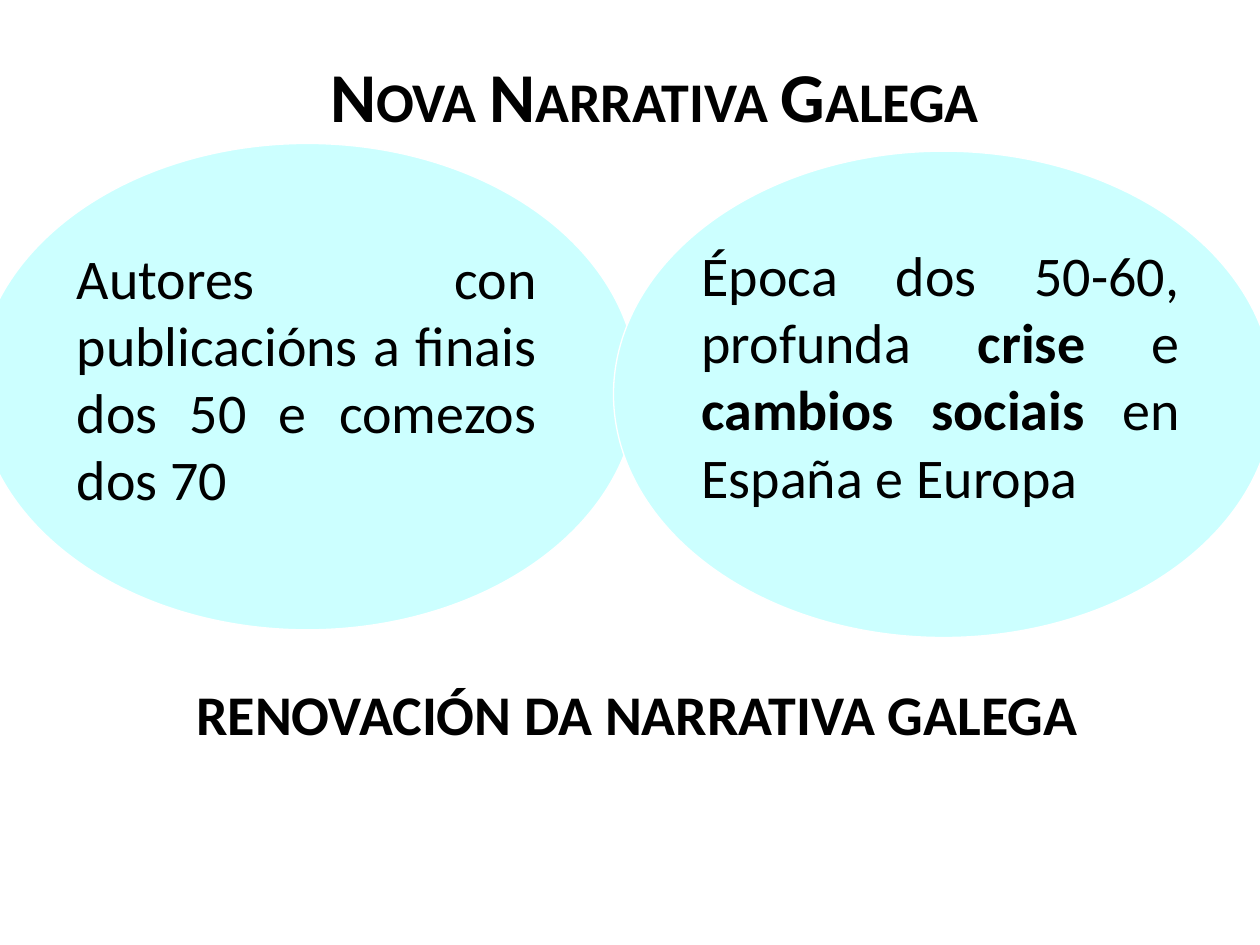
from pptx import Presentation
from pptx.dml.color import RGBColor
from pptx.enum.shapes import MSO_SHAPE
from pptx.enum.text import MSO_ANCHOR, MSO_AUTO_SIZE, PP_ALIGN
from pptx.util import Pt


def color(value):
    return RGBColor.from_string(value)


def write_text(shape, *parts, size=32, align=PP_ALIGN.LEFT, small_caps=False):
    """Fill the shape with one paragraph made of (text, bold) parts."""
    frame = shape.text_frame
    frame.word_wrap = True
    frame.auto_size = MSO_AUTO_SIZE.SHAPE_TO_FIT_TEXT
    frame.vertical_anchor = MSO_ANCHOR.TOP
    paragraph = frame.paragraphs[0]
    paragraph.alignment = align
    for text, bold in parts:
        run = paragraph.add_run()
        run.text = text
        run.font.name = "Calibri"
        run.font.size = Pt(size)
        run.font.bold = bold
        run.font.color.rgb = color("000000")
        if small_caps:
            run._r.get_or_add_rPr().set("cap", "small")


presentation = Presentation()
presentation.slide_width = Pt(720)
presentation.slide_height = Pt(540)
slide = presentation.slides.add_slide(presentation.slide_layouts[5])

# Title
title = slide.shapes.title
title.left, title.top, title.width, title.height = Pt(181.4), Pt(26.6), Pt(395.3), Pt(55.4)
write_text(title, ("Nova Narrativa Galega", True), size=40, small_caps=True)

# Ellipses
for left, top in [(-13, 82), (350.6, 86.4)]:
    ellipse = slide.shapes.add_shape(MSO_SHAPE.OVAL, Pt(left), Pt(top), Pt(377.3), Pt(277.9))
    ellipse.shadow.inherit = False
    ellipse.fill.solid()
    ellipse.fill.fore_color.rgb = color("CCFFFF")
    ellipse.line.color.rgb = color("FFFFFF")
    ellipse.line.width = Pt(0.75)

# Texts over the ellipses and the conclusion below them
authors = [("Autores con publicacións a finais dos 50 e comezos dos 70", False)]
period = [
    ("Época dos 50-60, profunda ", False),
    ("crise", True),
    (" e ", False),
    ("cambios sociais ", True),
    ("en España e Europa", False),
]
conclusion = [("RENOVACIÓN DA NARRATIVA GALEGA", True)]
for left, top, width, height, align, parts in [
    (36.7, 135.4, 277.2, 162.7, PP_ALIGN.JUSTIFY, authors),
    (393.8, 133.9, 287.3, 162.7, PP_ALIGN.JUSTIFY, period),
    (105.1, 384.5, 548.6, 46.1, PP_ALIGN.LEFT, conclusion),
]:
    box = slide.shapes.add_textbox(Pt(left), Pt(top), Pt(width), Pt(height))
    write_text(box, *parts, align=align)

presentation.save("out.pptx")
